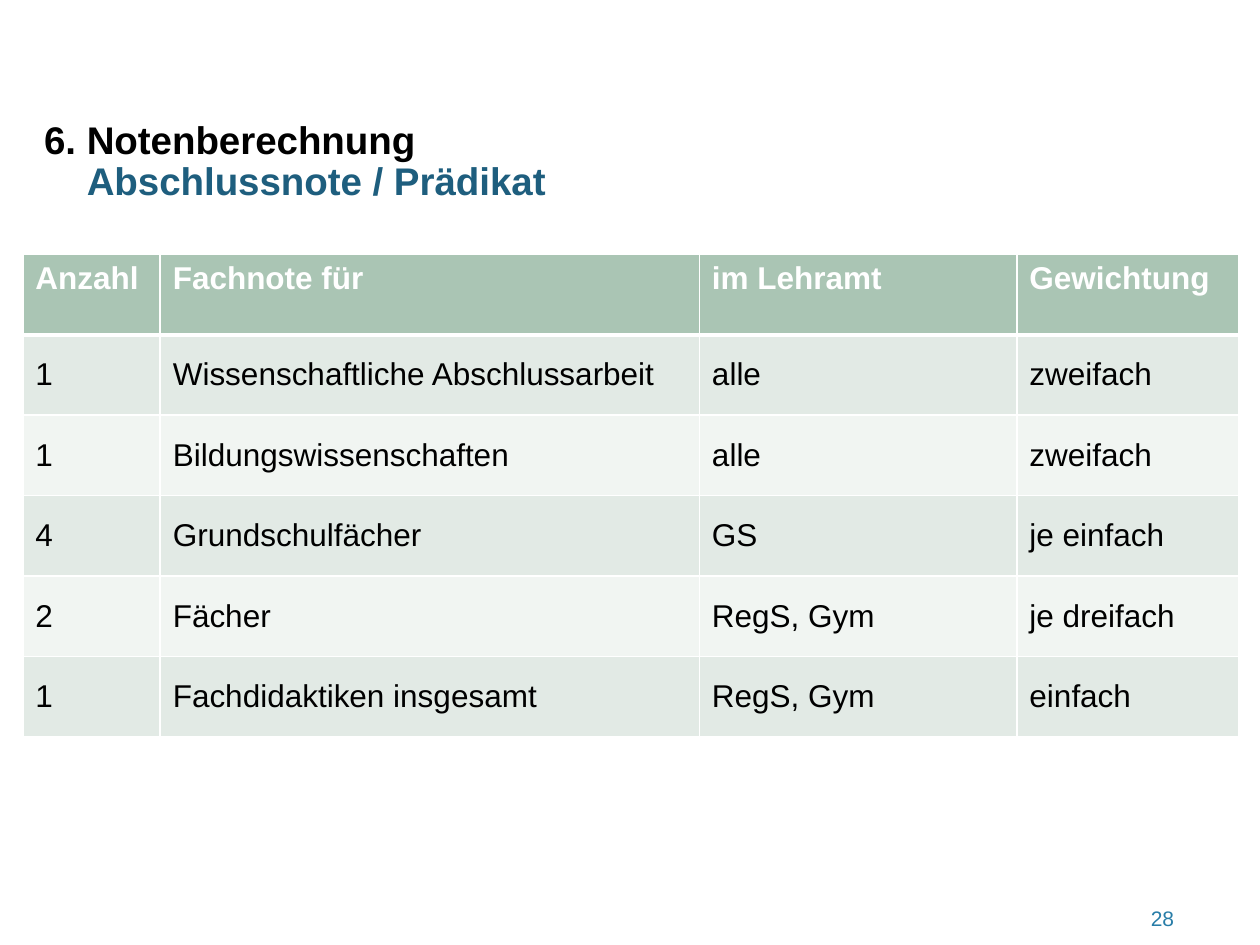
from lxml import etree
from pptx import Presentation
from pptx import util as u
from pptx.dml.color import RGBColor
from pptx.enum import text
from pptx.oxml import ns

COLOURS = {
    "ink": "000000",
    "paper": "FFFFFF",
    "heading": "1E5E7E",
    "number": "287DA8",
    "header": "AAC5B4",
    "odd": "E2EAE5",
    "even": "F1F5F2",
}

WIDTHS = (2.77, 10.87, 6.4, 4.47)
ROW_HEIGHT = 1.62
GRADES = (
    ("Anzahl", "Fachnote für", "im Lehramt", "Gewichtung"),
    ("1", "Wissenschaftliche Abschlussarbeit", "alle", "zweifach"),
    ("1", "Bildungswissenschaften", "alle", "zweifach"),
    ("4", "Grundschulfächer", "GS", "je einfach"),
    ("2", "Fächer", "RegS, Gym", "je dreifach"),
    ("1", "Fachdidaktiken insgesamt", "RegS, Gym", "einfach"),
)


class SlideBuilder:
    font = "Arial"

    def __init__(self, deck):
        self.page = deck.slides.add_slide(deck.slide_layouts[6])

    def add_wording(self, frame, wording, size, colour, bold=False, layout=None):
        para = frame.paragraphs[0]
        for name, value in (layout or {}).items():
            setattr(para, name, value)
        span = para.add_run()
        span.text = wording
        style = {"name": self.font, "size": u.Pt(size), "bold": bold}
        for name, value in style.items():
            setattr(span.font, name, value)
        span.font.color.rgb = RGBColor.from_string(COLOURS[colour])

    def label(self, place, wording, size, colour, bold=False, layout=None, frame_style=None):
        box = self.page.shapes.add_textbox(*map(u.Cm, place))
        frame = box.text_frame
        settings = {"word_wrap": True, "vertical_anchor": text.MSO_ANCHOR.TOP}
        settings.update(frame_style or {})
        for name, value in settings.items():
            setattr(frame, name, value)
        self.add_wording(frame, wording, size, colour, bold, layout)

    def borders(self, cell, weights):
        properties = cell._tc.get_or_add_tcPr()
        for side, weight in weights.items():
            line = etree.SubElement(properties, ns.qn(f"a:ln{side}"), w=str(u.Pt(weight)))
            fill = etree.SubElement(line, ns.qn("a:solidFill"))
            etree.SubElement(fill, ns.qn("a:srgbClr"), val=COLOURS["paper"])

    def table(self, left, top, widths, row_height, rows):
        size = (sum(widths), row_height * len(rows))
        place = map(u.Cm, (left, top, *size))
        grid = self.page.shapes.add_table(len(rows), len(widths), *place).table
        for column, width in zip(grid.columns, widths):
            column.width = u.Cm(width)
        anchors = text.MSO_ANCHOR
        for index, row in enumerate(rows):
            grid.rows[index].height = u.Cm(row_height)
            is_header = index == 0
            shade = "header" if is_header else ("even", "odd")[index % 2]
            weights = {"L": 1, "R": 1, "T": 3 if index == 1 else 1, "B": 3 if is_header else 1}
            for position, wording in enumerate(row):
                cell = grid.cell(index, position)
                self.borders(cell, weights)
                cell.fill.solid()
                cell.fill.fore_color.rgb = RGBColor.from_string(COLOURS[shade])
                cell.vertical_anchor = anchors.TOP if is_header else anchors.MIDDLE
                colour = "paper" if is_header else "ink"
                self.add_wording(cell.text_frame, wording, 18, colour, is_header)


def main():
    deck = Presentation()
    deck.slide_width, deck.slide_height = u.Cm(25.4), u.Cm(19.05)
    builder = SlideBuilder(deck)
    builder.label((0.64, 2.13, 13.87, 1.19), "6. Notenberechnung", 22, "ink", True,
                  {"line_spacing": 1.1})
    builder.label((21.56, 17.78, 2.36, 0.84), "28", 12, "number",
                  layout={"alignment": text.PP_ALIGN.RIGHT},
                  frame_style={"margin_top": u.Cm(0.48), "margin_bottom": 0})
    builder.table(0.46, 5.13, WIDTHS, ROW_HEIGHT, GRADES)
    builder.label((1.5, 3.12, 9.9, 1.12), "Abschlussnote / Prädikat", 22, "heading", True,
                  {"line_spacing": u.Pt(24)},
                  {"word_wrap": False, "auto_size": text.MSO_AUTO_SIZE.SHAPE_TO_FIT_TEXT})
    deck.save("out.pptx")


if __name__ == "__main__":
    main()
